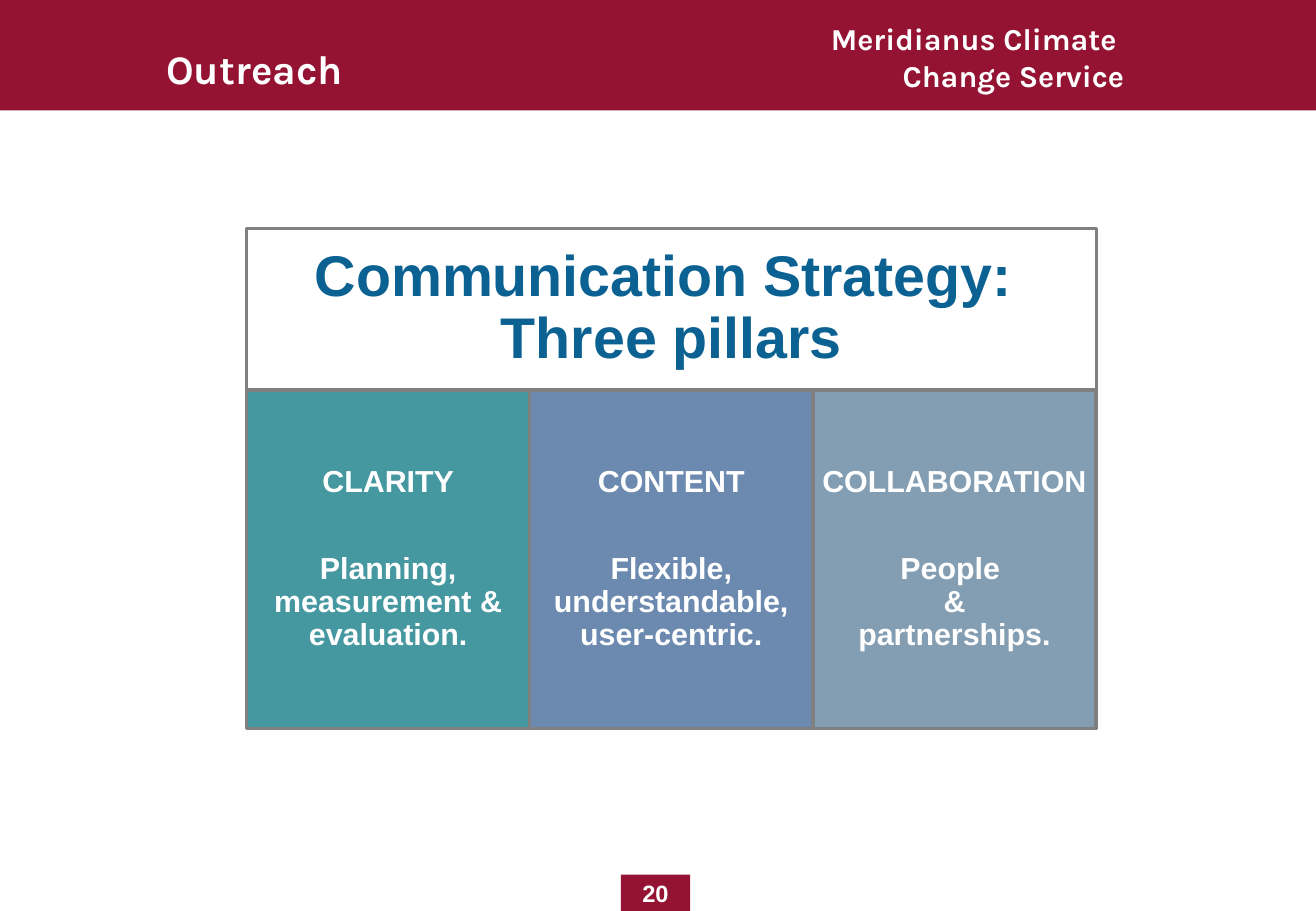
import pptx
import pptx.util
import pptx.dml.color
import pptx.enum.shapes
import pptx.enum.text
from dataclasses import dataclass

Inches, Pt = pptx.util.Inches, pptx.util.Pt
ALIGN = pptx.enum.text.PP_ALIGN

SECTION = "Outreach"
SERVICE = "Meridianus Climate \vChange Service"
STRATEGY = "Communication Strategy: \vThree pillars"
PILLARS = [
    ("CLARITY", "Planning, measurement & evaluation.", "4597A0"),
    ("CONTENT", "Flexible, understandable, user-centric.", "6C8AAF"),
    ("COLLABORATION", "People \v&\vpartnerships.", "839DB2"),
]
PAGE_NUMBER = "20"


@dataclass(frozen=True)
class Theme:
    brand: str = "941333"
    strategy: str = "0B6192"
    border: str = "808080"
    light: str = "FFFFFF"
    header_font: str = "Karla"
    body_font: str = "Arial"
    section_size: int = 24
    strategy_size: int = 34
    text_size: int = 18
    page_size: int = 14


THEME = Theme()
SLIDE_W, SLIDE_H = 10.83, 7.5
PANEL_LEFT, PANEL_TOP, PANEL_W = 2.03, 1.88, 6.99
STRATEGY_H, PILLAR_H = 1.33, 2.79
PILLAR_W = PANEL_W / len(PILLARS)
HEADING_GAP = 32


def rgb(value):
    return pptx.dml.color.RGBColor.from_string(value)


def add_box(slide, left, top, width, height, fill=None, border=None):
    """Add a rectangle; border is its line width in points."""
    box = slide.shapes.add_shape(
        pptx.enum.shapes.MSO_SHAPE.RECTANGLE,
        Inches(left), Inches(top), Inches(width), Inches(height))
    box.shadow.inherit = False
    if fill:
        box.fill.solid()
        box.fill.fore_color.rgb = rgb(fill)
    else:
        box.fill.background()
    if border:
        box.line.color.rgb = rgb(THEME.border)
        box.line.width = Pt(border)
    else:
        box.line.fill.background()
    return box


def write(box, paragraphs, size, font=THEME.body_font, color=THEME.light,
          align=ALIGN.CENTER, spacing=None, gap=0, inset=None, middle=True):
    """Fill a shape with bold paragraphs, set apart by gap points."""
    frame = box.text_frame
    frame.word_wrap = True
    frame.vertical_anchor = (pptx.enum.text.MSO_ANCHOR.MIDDLE if middle
                             else pptx.enum.text.MSO_ANCHOR.TOP)
    if inset is not None:
        frame.margin_left = frame.margin_right = Inches(inset)
        frame.margin_top = frame.margin_bottom = Inches(inset)
    for index, text in enumerate(paragraphs):
        paragraph = frame.add_paragraph() if index else frame.paragraphs[0]
        paragraph.text = text
        paragraph.alignment = align
        if spacing:
            paragraph.line_spacing = spacing
        if index:
            paragraph.space_before = Pt(gap)
        paragraph.font.name = font
        paragraph.font.size = Pt(size)
        paragraph.font.bold = True
        paragraph.font.color.rgb = rgb(color)


def add_header(slide):
    add_box(slide, 0, 0, SLIDE_W, 0.91, THEME.brand)
    for text, place, size, align in (
        (SERVICE, (6.67, 0.12, 2.68, 0.71), THEME.text_size, ALIGN.RIGHT),
        (SECTION, (0, 0.31, 4.19, 0.45), THEME.section_size, ALIGN.CENTER),
    ):
        label = slide.shapes.add_textbox(*map(Inches, place))
        write(label, [text], size, THEME.header_font, align=align, middle=False)


def add_panel(slide):
    strategy = add_box(slide, PANEL_LEFT, PANEL_TOP, PANEL_W, STRATEGY_H, border=1.75)
    write(strategy, [STRATEGY], THEME.strategy_size, color=THEME.strategy,
          spacing=0.9, inset=0.14)
    for column, (heading, detail, fill) in enumerate(PILLARS):
        pillar = add_box(slide, PANEL_LEFT + column * PILLAR_W, PANEL_TOP + STRATEGY_H,
                         PILLAR_W, PILLAR_H, fill, border=2)
        write(pillar, [heading, detail], THEME.text_size, spacing=0.9,
              gap=HEADING_GAP, inset=0.07)


def main():
    deck = pptx.Presentation()
    deck.slide_width, deck.slide_height = Inches(SLIDE_W), Inches(SLIDE_H)
    slide = deck.slides.add_slide(deck.slide_layouts[6])
    add_header(slide)
    add_panel(slide)
    page = add_box(slide, 5.11, 7.2, 0.57, 0.3, THEME.brand)
    write(page, [PAGE_NUMBER], THEME.page_size, inset=0)
    deck.save("out.pptx")


if __name__ == "__main__":
    main()
